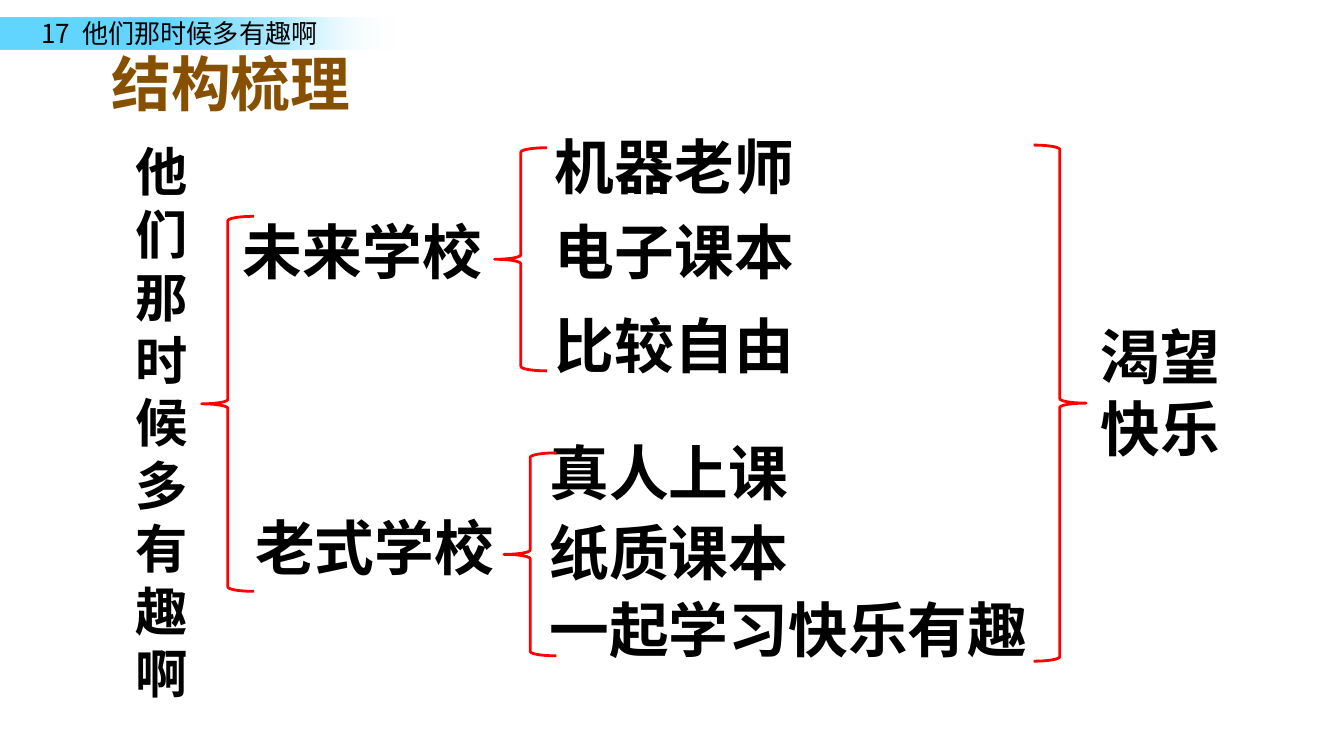
from lxml import etree
from pptx import Presentation
from pptx.dml.color import RGBColor
from pptx.enum.shapes import MSO_SHAPE as Shape
from pptx.enum.text import MSO_AUTO_SIZE as AutoSize
from pptx.oxml import parse_xml
from pptx.oxml.ns import nsdecls, qn
from pptx.util import Inches, Pt

FONT = "Noto Sans CJK SC"
BLACK, BROWN, RED = "000000", "875000", "FF0000"


def color(value):
    return RGBColor.from_string(value)


def add_text(left, top, width, height, lines, size=32, bold=True,
             fill=BLACK, font=FONT, wrap=True):
    """Add a text box; each line is a list of runs."""
    box = slide.shapes.add_textbox(Inches(left), Inches(top), Inches(width), Inches(height))
    frame = box.text_frame
    frame.word_wrap = wrap
    frame.auto_size = AutoSize.SHAPE_TO_FIT_TEXT
    for index, runs in enumerate(lines):
        paragraph = frame.add_paragraph() if index else frame.paragraphs[0]
        for text in runs:
            run = paragraph.add_run()
            run.text = text
            run.font.size = Pt(size)
            run.font.bold = bold
            run.font.name = font
            run.font.color.rgb = color(fill)
            east_asian = etree.SubElement(run.font._element, qn("a:ea"))
            east_asian.set("typeface", FONT)
    return frame


# Widescreen slide, 16:9
presentation = Presentation()
presentation.slide_width = Inches(10)
presentation.slide_height = Inches(10) * 9 // 16
slide = presentation.slides.add_slide(presentation.slide_layouts[6])

# Header band, fading out to the right
band = slide.shapes.add_shape(Shape.RECTANGLE, 0, Inches(0.13), Inches(3.03), Inches(0.24))
band.shadow.inherit = False
band.line.fill.background()
stops = "".join(
    f'<a:gs pos="{position * 1000}"><a:srgbClr val="{value}">'
    f'<a:alpha val="{alpha * 1000}"/></a:srgbClr></a:gs>'
    for position, value, alpha in [(40, "63D6FF", 100), (70, "97E4FF", 76), (97, "FFFFFF", 0)]
)
gradient = parse_xml(
    f'<a:gradFill {nsdecls("a")} rotWithShape="1"><a:gsLst>{stops}</a:gsLst>'
    '<a:lin ang="0" scaled="0"/></a:gradFill>'
)
band._element.spPr.find(qn("a:prstGeom")).addnext(gradient)

# Lesson number and name, with a widened gap between them
header = add_text(0.21, 0.08, 2.36, 0.34, [["17", " ", "他们那时候多有趣啊"]],
                  size=14, bold=False, wrap=False)
header.paragraphs[0].runs[1].font._element.set("spc", "310")

# Section title
title = add_text(0.76, 0.31, 2.43, 0.61, [["结构梳理"]], fill=BROWN, font="Calibri")
title.margin_left = title.margin_right = Inches(0.07)
title.margin_top = title.margin_bottom = Inches(0.04)

# Lesson name in a column one character wide
add_text(0.91, 0.99, 0.94, 4.34, [["他们那时候多有趣啊"]], size=28)

# Schools and their features
for left, top, width, text in [
    (1.71, 1.55, 2.44, "未来学校"),
    (4.03, 0.92, 3.07, "机器老师"),
    (4.03, 1.55, 3.07, "电子课本"),
    (4.03, 2.25, 3.07, "比较自由"),
    (1.8, 3.75, 3.07, "老式学校"),
    (3.99, 3.19, 3.07, "真人上课"),
    (3.99, 3.79, 3.07, "纸质课本"),
    (3.99, 4.36, 3.83, "一起学习快乐有趣"),
]:
    add_text(left, top, width, 0.64, [[text]])

# Conclusion
add_text(8.09, 2.33, 1.25, 1.18, [["渴望"], ["快乐"]])

# Braces
for kind, left, top, height in [
    (Shape.LEFT_BRACE, 1.5, 1.61, 2.79),
    (Shape.LEFT_BRACE, 3.68, 1.1, 1.66),
    (Shape.LEFT_BRACE, 3.75, 3.37, 1.51),
    (Shape.RIGHT_BRACE, 7.69, 1.08, 3.84),
]:
    brace = slide.shapes.add_shape(kind, Inches(left), Inches(top), Inches(0.39), Inches(height))
    brace.shadow.inherit = False
    brace.fill.background()
    brace.line.color.rgb = color(RED)
    brace.line.width = Pt(1.5)

presentation.save("out.pptx")
